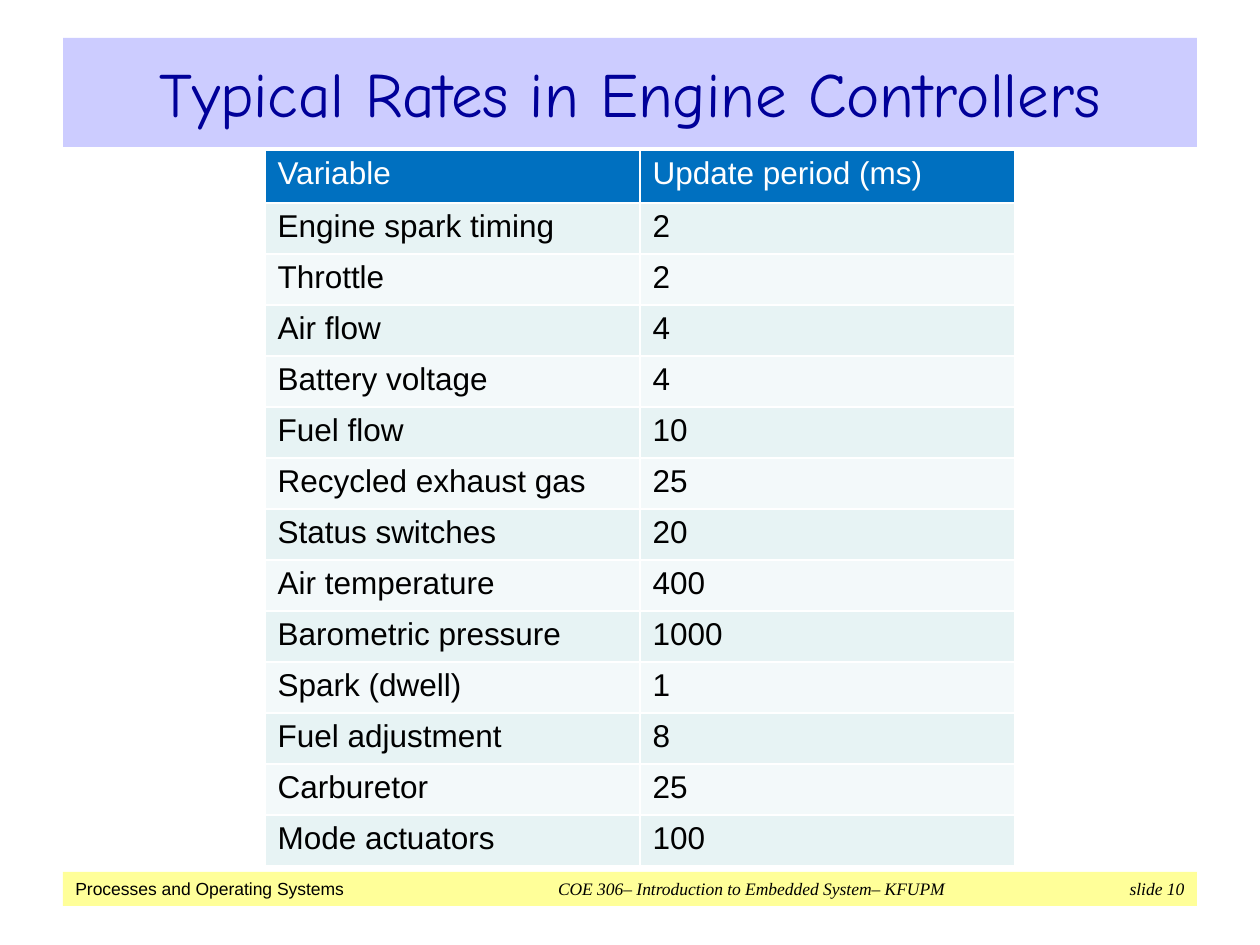
from lxml.etree import SubElement
from pptx import Presentation
from pptx.dml.color import RGBColor
from pptx.enum.shapes import MSO_SHAPE as Shape
from pptx.enum.text import MSO_ANCHOR as Anchor, PP_ALIGN as Align
from pptx.oxml.ns import qn
from pptx.util import Emu, Pt

PX = 914400 // 126
ROWS = [
    ("Variable", "Update period (ms)"),
    ("Engine spark timing", "2"),
    ("Throttle", "2"),
    ("Air flow", "4"),
    ("Battery voltage", "4"),
    ("Fuel flow", "10"),
    ("Recycled exhaust gas", "25"),
    ("Status switches", "20"),
    ("Air temperature", "400"),
    ("Barometric pressure", "1000"),
    ("Spark (dwell)", "1"),
    ("Fuel adjustment", "8"),
    ("Carburetor", "25"),
    ("Mode actuators", "100"),
]


def color(value):
    return RGBColor.from_string(value)


def style(font, name, size, value):
    font.name, font.size, font.bold = name, Pt(size), False
    font.color.rgb = color(value)


deck = Presentation()
deck.slide_width, deck.slide_height = Emu(1260 * PX), Emu(945 * PX)
page = deck.slides.add_slide(deck.slide_layouts.get_by_name("Title Only"))

# Footer bar: topic on the left, course centred, slide number on the right
footer = page.shapes.add_shape(Shape.RECTANGLE, 63 * PX, 872 * PX, 1134 * PX, 34 * PX)
footer.shadow.inherit = False
footer.fill.solid()
footer.fill.fore_color.rgb = color("FFFF99")
footer.line.fill.background()
frame = footer.text_frame
frame.vertical_anchor = Anchor.MIDDLE
para = frame.paragraphs[0]
para.alignment = Align.LEFT
tabs = SubElement(para._p.get_or_add_pPr(), qn("a:tabLst"))
for position, kind in [(676, "ctr"), (1109, "r")]:
    SubElement(tabs, qn("a:tab"), pos=str(position * PX), algn=kind)
for text, font_name, italic in [
    ("Processes and Operating Systems", "Arial", False),
    ("\tCOE 306– Introduction to Embedded System– KFUPM\tslide 10", "Times New Roman", True),
]:
    span = para.add_run()
    span.text = text
    style(span.font, font_name, 10, "000000")
    span.font.italic = italic

# Title band
title = page.shapes.title
title.left, title.top, title.width, title.height = 63 * PX, 38 * PX, 1134 * PX, 109 * PX
title.fill.solid()
title.fill.fore_color.rgb = color("CCCCFF")
title.text_frame.text = "Typical Rates in Engine Controllers"
title.text_frame.vertical_anchor = Anchor.MIDDLE
para = title.text_frame.paragraphs[0]
para.alignment = Align.CENTER
style(para.font, "Comic Neue", 36, "000099")

# Table of update periods: blue header, then alternating bands
table = page.shapes.add_table(
    len(ROWS), 2, 265 * PX, 150 * PX, 750 * PX, 716 * PX
).table
for row_index, row in enumerate(ROWS):
    table.rows[row_index].height = Emu((51 if row_index else 53) * PX)
    if row_index == 0:
        fill, ink = "0070C0", "FFFFFF"
    else:
        fill, ink = ("E7F3F4" if row_index % 2 else "F3F9FA"), "000000"
    for column_index, text in enumerate(row):
        cell = table.cell(row_index, column_index)
        cell.text = text
        cell.fill.solid()
        cell.fill.fore_color.rgb = color(fill)
        style(cell.text_frame.paragraphs[0].font, "Arial", 18, ink)

deck.save("out.pptx")
